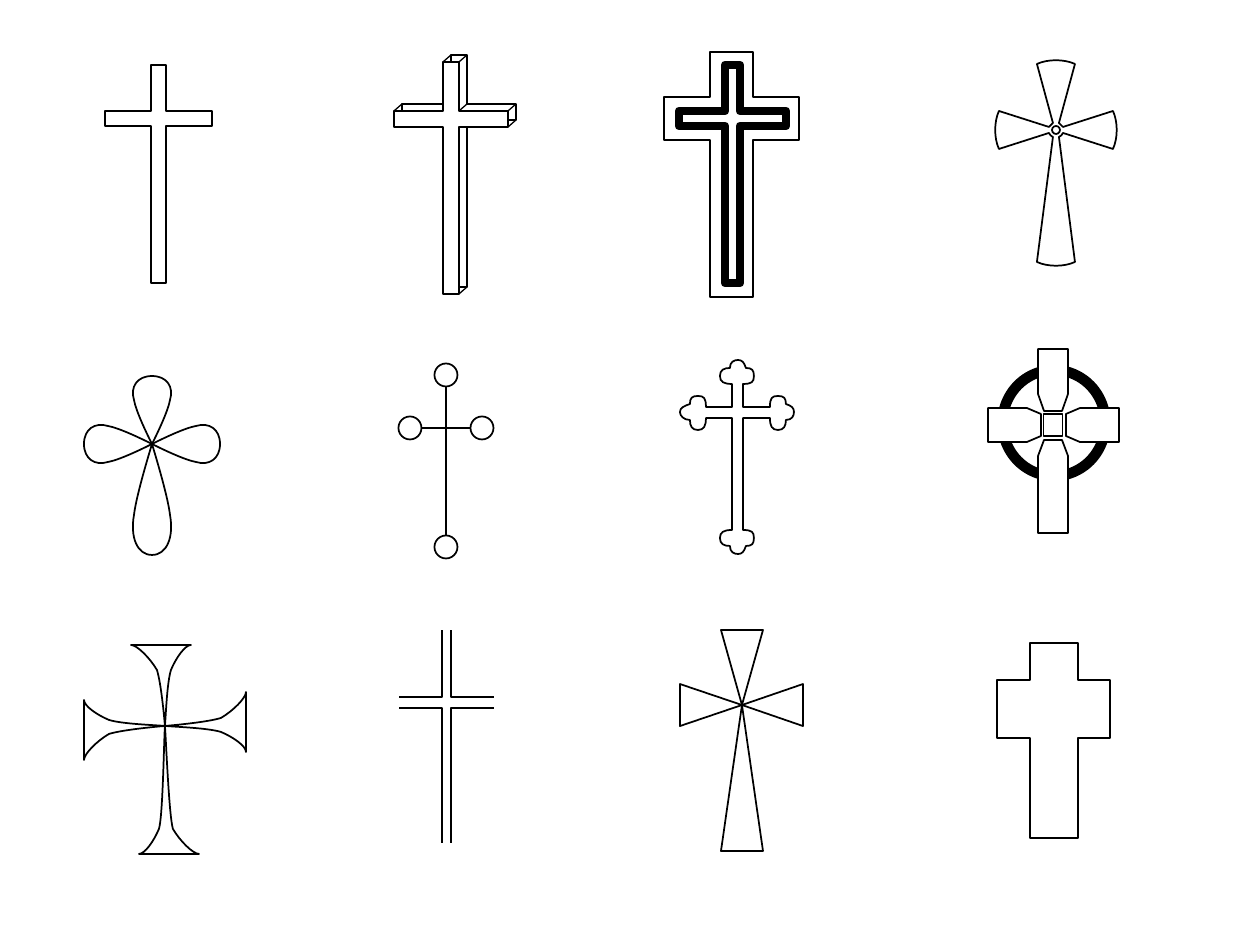
from lxml import etree
from pptx import Presentation, util as u
from pptx.dml.color import RGBColor
from pptx.enum import shapes
from pptx.oxml.ns import qn

DPI = 126
SCALE = u.Inches(1) / DPI
INK, PAPER = "000000", "FFFFFF"
OVAL, RECT = shapes.MSO_SHAPE.OVAL, shapes.MSO_SHAPE.RECTANGLE


def px(n):
    return u.Emu(round(n * SCALE))


def color(code):
    return RGBColor.from_string(code)


def style(item, fill, width):
    item.shadow.inherit = False
    if fill:
        item.fill.solid()
        item.fill.fore_color.rgb = color(fill)
    else:
        item.fill.background()
    item.line.color.rgb = color(INK)
    item.line.width = u.Pt(width)


def outline(box, pts, fill=PAPER, width=1, close=True):
    pen = box.build_freeform(*pts[0], scale=SCALE)
    pen.add_line_segments(pts[1:], close=close)
    item = pen.convert_to_shape()
    style(item, fill, width)
    return item


def curve(box, pts, fill=PAPER):
    """Draw an outline, with every three points after the first as one Bezier."""
    item = outline(box, pts, fill)
    steps = list(item._element.iter(qn("a:lnTo")))
    for trio in zip(steps[::3], steps[1::3], steps[2::3]):
        bend = etree.Element(qn("a:cubicBezTo"))
        trio[0].addprevious(bend)
        for step in trio:
            bend.append(step[0])
            step.getparent().remove(step)


def plus(box, xs, ys, fill=None, width=1):
    """Draw a cross from the four edges it has along each axis."""
    a, b, c, d = xs
    e, f, g, h = ys
    outline(box, [(d, f), (c, f), (c, e), (b, e), (b, f), (a, f),
                  (a, g), (b, g), (b, h), (c, h), (c, g), (d, g)], fill, width)


def preset(box, kind, mid, w, h, fill=PAPER, width=1):
    x, y = mid[0] - w / 2, mid[1] - h / 2
    style(box.add_shape(kind, px(x), px(y), px(w), px(h)), fill, width)


def line(box, start, end, width=1):
    rule = box.add_connector(shapes.MSO_CONNECTOR.STRAIGHT,
                             *[px(n) for n in (*start, *end)])
    rule.line.color.rgb = color(INK)
    rule.line.width = u.Pt(width)
    etree.SubElement(rule._element.spPr, qn("a:effectLst"))


def spokes(mid, arm, sizes):
    """Give the arms that point up, right, down and left from mid.

    arm(*size) gives the points of an arm that points up from (0, 0).
    """
    arms = []
    for turns, size in enumerate(sizes):
        pts = arm(*size)
        for _ in range(turns):
            pts = [(-y, x) for x, y in pts]
        arms.append([(mid[0] + x, mid[1] + y) for x, y in pts])
    return arms


def joined(arms):
    """Make one curve of arms that each begin with a straight step."""
    return sum(arms, [])[2:]


def straight(x, y):
    """Give a Bezier step that runs straight to a point."""
    return [(x, y)] * 3


def mirror(half):
    """Add the right half to a left half that ends on the axis."""
    return half + [(-x, y) for x, y in half[-2::-1]]


def petal(reach):
    half = [(0, 0), (-6, 0.18), (-16, 0.49), (-18, 0.64),
            (-22, 0.84), (-15, 1), (0, 1)]
    return mirror([(x, -part * reach) for x, part in half])


def flare(reach):
    """Widen towards the tip, which leans a little to the left."""
    rows = [(0, 0, 0), (1, 0, 12), (3, -1, reach - 38), (7, -1, reach - 25),
            (13, -2, reach - 13), (24, -4, reach), (30, -4, reach)]
    left = [(lean - wide, -up) for wide, lean, up in rows]
    right = [(lean + wide, -up) for wide, lean, up in rows]
    return right[::-1] + left[1:]


def blade(reach):
    """Go round a blade with a bowed tip, then along the hub to the next one."""
    half, bow = 19, 5
    tip = [(-8, -reach - bow), (8, -reach - bow), (half, -reach)]
    hub = [(5, -6), (6, -5), (7, -3)]
    return straight(-half, -reach) + tip + straight(3, -7) + hub


def bud(reach, stem):
    """Go up a stem and round the three lobes at its end."""
    half = stem / 2
    lobes = [(-half, 0), (-14, 0), (-17, -2), (-17, -8),
             (-17, -14), (-14, -16), (-8, -16),
             (-7, -22), (-4, -25), (0, -25)]
    head = [(x, y - reach) for x, y in mirror(lobes)]
    return straight(-half, -half) + straight(*head[0]) + head[1:]


def bar(half, base, neck, reach):
    """Give a bar that narrows from its neck to its base."""
    slim = half - 6
    return [(-slim, -base), (-half, -neck), (-half, -reach),
            (half, -reach), (half, -neck), (slim, -base)]


def wedge(reach):
    half = 21
    return [(0, 0), (-half, -reach), (half, -reach)]


def solid(box, xs, ys):
    """Draw a cross with depth: back face, front face and the edges between."""
    dx, dy, thin = 8, -7, 0.75
    a, b, c, d = xs
    e, f, g, h = ys
    plus(box, [x + dx for x in xs], [y + dy for y in ys], PAPER, thin)
    corners = [(a, f), (b, e), (c, e), (c, f), (d, f), (d, g), (c, h)]
    for x, y in corners:
        line(box, (x, y), (x + dx, y + dy), thin)
    plus(box, xs, ys, PAPER, thin)


def framed(box):
    plus(box, (664, 710, 753, 799), (52, 97, 140, 297), PAPER)
    plus(box, (679, 725, 740, 786), (65, 111, 126, 283), None, 5)


def fan(box):
    mid = (1056, 130)
    curve(box, joined(spokes(mid, blade, [(66,), (57,), (132,), (57,)])), None)
    preset(box, OVAL, mid, 8, 8)


def balls(box):
    """Draw two lines with a ball at each end."""
    x, y, size = 446, 428, 23
    left, right, top, foot = x - 36, x + 36, y - 53, y + 119
    line(box, (x, top), (x, foot))
    line(box, (left, y), (right, y))
    for mid in ((x, top), (right, y), (left, y), (x, foot)):
        preset(box, OVAL, mid, size, size)


def budded(box):
    stem = 11
    mid = (732 + stem / 2, 407 + stem / 2)
    sizes = [(reach, stem) for reach in (28, 32, 117, 32)]
    curve(box, joined(spokes(mid, bud, sizes)), None)


def ringed(box):
    mid = (1053, 425)
    preset(box, OVAL, (1054, 423), 103, 106, None, 6)
    sizes = [(15, 14, 31, 76), (17, 13, 27, 66),
             (15, 15, 31, 108), (17, 12, 26, 65)]
    for arm in spokes(mid, bar, sizes):
        outline(box, arm)
    preset(box, RECT, mid, 19, 22)


def double(box):
    """Draw four open corners round the gap between double lines."""
    for x, side in ((442, 399), (451, 494)):
        for y, tip in ((697, 630), (708, 843)):
            outline(box, [(x, tip), (x, y), (side, y)], None, close=False)


def main():
    deck = Presentation()
    deck.slide_width, deck.slide_height = px(1260), px(945)
    page = deck.slides.add_slide(deck.slide_layouts[6]).shapes

    def group():
        return page.add_group_shape().shapes

    plus(page, (105, 151, 166, 212), (65, 111, 126, 283))
    solid(group(), (394, 443, 459, 508), (62, 111, 127, 294))
    framed(group())
    fan(group())

    petals, flares, wedges = group(), group(), group()
    for arm in spokes((152, 444), petal, [(68,), (68,), (111,), (68,)]):
        curve(petals, arm)
    balls(group())
    budded(page)
    ringed(group())

    for arm in spokes((165, 726), flare, [(81,), (81,), (128,), (81,)]):
        curve(flares, arm)
    double(group())
    for arm in spokes((742, 705), wedge, [(75,), (61,), (146,), (62,)]):
        outline(wedges, arm)
    plus(page, (997, 1030, 1078, 1110), (643, 680, 738, 838), PAPER)
    deck.save("out.pptx")


if __name__ == "__main__":
    main()
